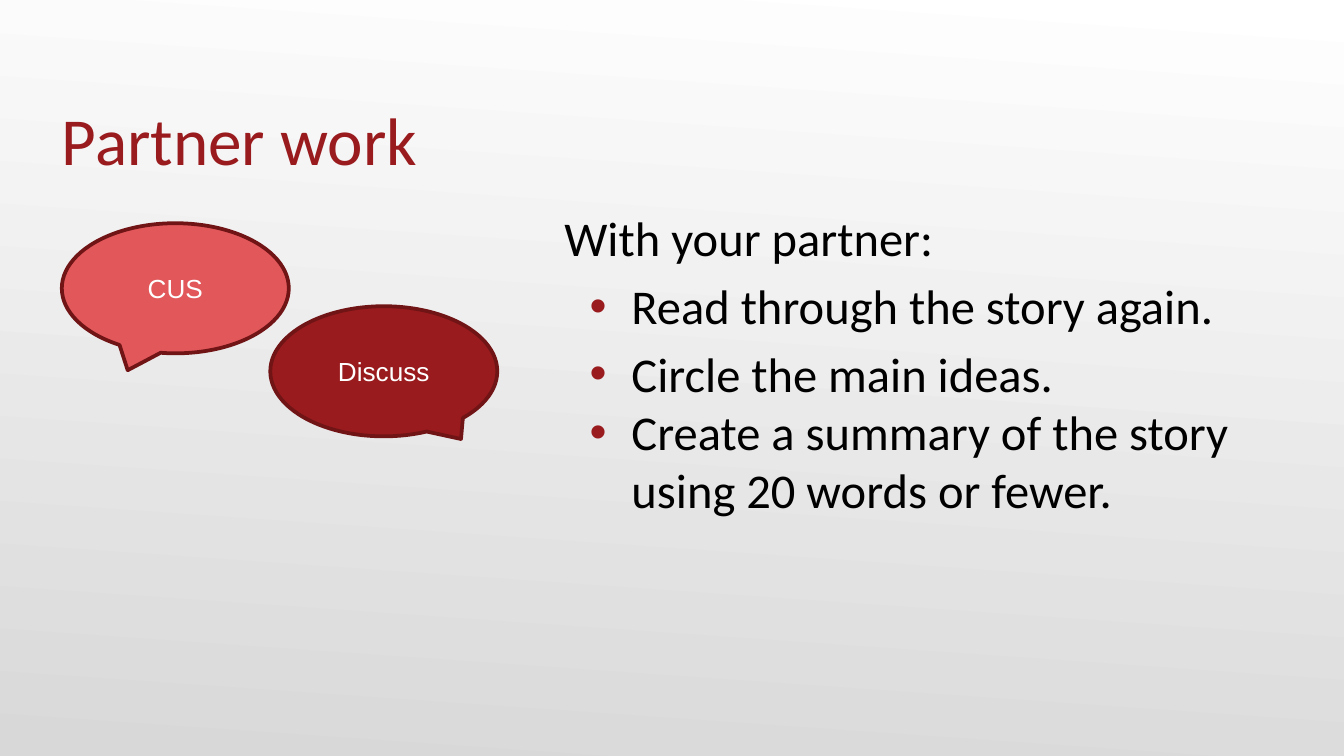
from lxml import etree
from pptx import Presentation
from pptx.dml.color import RGBColor
from pptx.enum.shapes import MSO_SHAPE
from pptx.enum.text import MSO_ANCHOR, MSO_AUTO_SIZE, PP_ALIGN
from pptx.oxml.ns import qn
from pptx.util import Cm, Pt

BUBBLE = MSO_SHAPE.OVAL_CALLOUT
LEFT, CENTER = PP_ALIGN.LEFT, PP_ALIGN.CENTER
BOTTOM, MIDDLE = MSO_ANCHOR.BOTTOM, MSO_ANCHOR.MIDDLE
FIXED = MSO_AUTO_SIZE.NONE

RED = RGBColor(0x99, 0x1B, 0x1E)
ROSE = RGBColor(0xE1, 0x57, 0x5A)
WINE = RGBColor(0x71, 0x14, 0x16)
BLACK = RGBColor(0, 0, 0)
WHITE = RGBColor(0xFF, 0xFF, 0xFF)
GREY = RGBColor(0xD8, 0xD8, 0xD8)

TASKS = [
    "Read through the story again.",
    "Circle the main ideas.",
    "Create a summary of the story using 20 words or fewer.",
]


def place(shape, box):
    """Move a shape to a box of left, top, width and height in cm."""
    shape.left, shape.top, shape.width, shape.height = map(Cm, box)


def style(para, name, size, color):
    """Format all runs of a paragraph."""
    for run in para.runs:
        run.font.name = name
        run.font.size = Pt(size)
        run.font.color.rgb = color


def indent(para, left, hang, mark=None):
    """Set the indent of a paragraph and its red bullet, if any."""
    props = para._p.get_or_add_pPr()
    props.set("marL", str(Cm(left)))
    props.set("indent", str(-Cm(hang)))
    if mark is None:
        etree.SubElement(props, qn("a:buNone"))
        return
    tint = etree.SubElement(props, qn("a:buClr"))
    etree.SubElement(tint, qn("a:srgbClr"), val=str(RED))
    etree.SubElement(props, qn("a:buFont"), typeface="Arial")
    etree.SubElement(props, qn("a:buChar"), char=mark)


def paint_back(slide):
    """Fill the background with a slightly tilted gradient."""
    fill = slide.background.fill
    fill.gradient()
    fill.gradient_angle = 266
    for stop, color, spot in zip(fill.gradient_stops, (WHITE, GREY), (0, 1)):
        stop.color.rgb = color
        stop.position = spot


def add_title(slide, box):
    """Fill the title placeholder."""
    title = slide.shapes.title
    place(title, box)
    frame = title.text_frame
    frame.text = "Partner work"
    frame.auto_size = FIXED
    frame.vertical_anchor = BOTTOM
    frame.margin_left = frame.margin_right = frame.margin_bottom = 0
    frame.margin_top = Cm(0.13)
    para = frame.paragraphs[0]
    para.alignment = LEFT
    style(para, "Calibri", 36, RED)


def add_tasks(slide, box):
    """Fill the body placeholder with the lead line and the tasks."""
    body = slide.placeholders[1]
    place(body, box)
    frame = body.text_frame
    frame.text = "\n".join(["With your partner:"] + TASKS)
    frame.auto_size = FIXED
    for para, gap in zip(frame.paragraphs, (0, 5.2, 5.2, 0)):
        if para.text in TASKS:
            indent(para, 1.27, 0.79, "•")
        else:
            indent(para, 0, 0)
        para.space_before = Pt(gap)
        style(para, "Calibri", 26, BLACK)


def add_bubbles(slide, box):
    """Draw two speech bubbles in opposite corners of the box."""
    left, top, width, height = box
    wide, high = 4.29, 2.46
    bubbles = [
        ("CUS", ROSE, left, top, (-0.21, 0.63)),
        ("Discuss", RED, left + width - wide, top + height - high, (0.34, 0.52)),
    ]
    for text, color, x, y, tail in bubbles:
        shape = slide.shapes.add_shape(BUBBLE, Cm(x), Cm(y), Cm(wide), Cm(high))
        shape.shadow.inherit = False
        shape.adjustments[0], shape.adjustments[1] = tail
        shape.fill.solid()
        shape.fill.fore_color.rgb = color
        shape.line.color.rgb = WINE
        shape.line.width = Pt(2)
        frame = shape.text_frame
        frame.text = text
        frame.vertical_anchor = MIDDLE
        para = frame.paragraphs[0]
        para.alignment = CENTER
        style(para, "Arial", 14, WHITE)


def main():
    """Build and save the slide."""
    deck = Presentation()
    deck.slide_width, deck.slide_height = Cm(25.4), Cm(14.29)
    slide = deck.slides.add_slide(deck.slide_layouts[1])
    paint_back(slide)
    add_title(slide, (1.17, 0.99, 22.86, 2.39))
    add_tasks(slide, (10.41, 3.81, 13.44, 9.14))
    add_bubbles(slide, (1.17, 4.22, 8.23, 4.03))
    deck.save("out.pptx")


if __name__ == "__main__":
    main()
